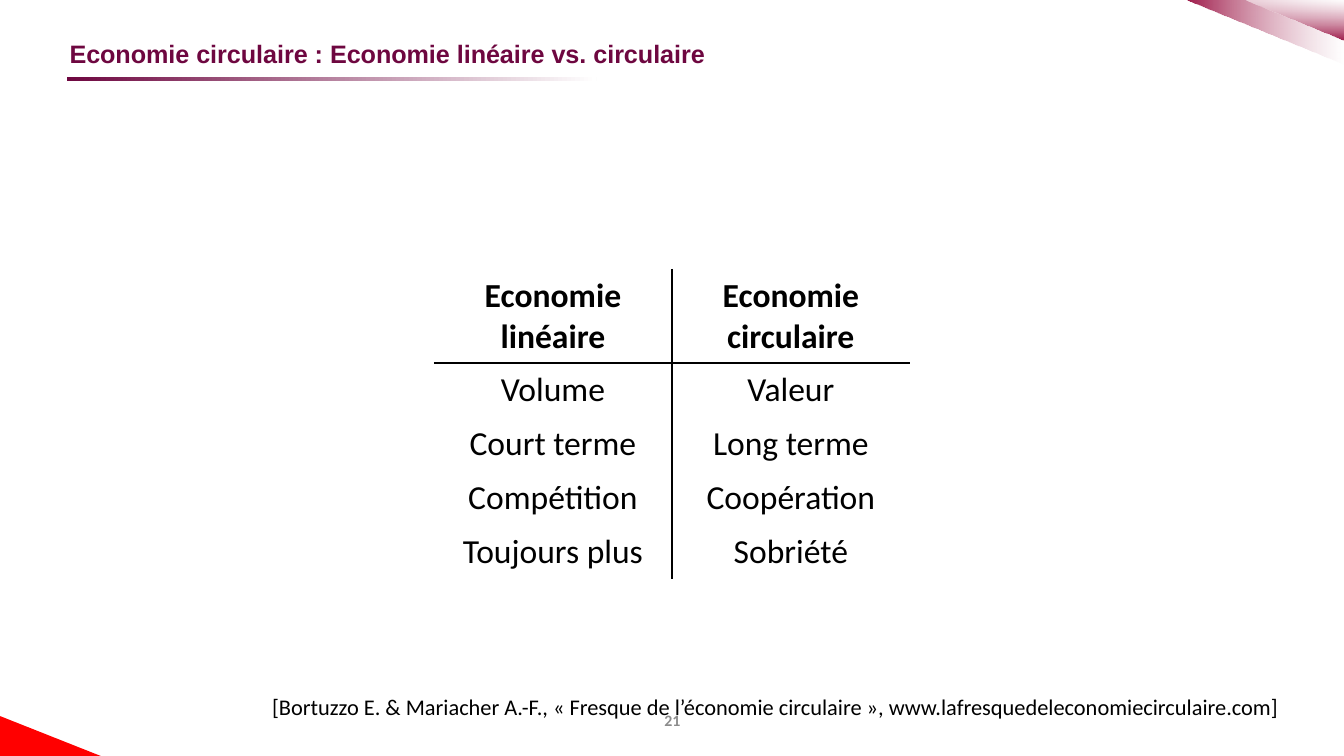
from dataclasses import dataclass

from lxml.etree import SubElement
from pptx import Presentation
from pptx.dml.color import RGBColor
from pptx.enum.shapes import MSO_SHAPE
from pptx.enum.text import MSO_ANCHOR, MSO_AUTO_SIZE, PP_ALIGN
from pptx.oxml.ns import qn
from pptx.util import Pt


@dataclass(frozen=True)
class Theme:
    plum: str = "6E0740"
    crimson: str = "9D1747"
    red: str = "FF0000"
    white: str = "FFFFFF"
    black: str = "000000"
    grey: str = "8C8C8C"
    heading_font: str = "Arial"
    body_font: str = "Calibri"
    title_size: float = 13.5
    table_size: float = 18
    source_size: float = 12
    number_size: float = 8.5
    rule_width: float = 1


THEME = Theme()


@dataclass(frozen=True)
class Stop:
    color: str
    opacity: int = 100


@dataclass(frozen=True)
class Corner:
    points: tuple
    stops: tuple
    angle: int = 0


@dataclass(frozen=True)
class Label:
    text: str
    box: tuple
    size: float
    color: str
    font: str = THEME.body_font
    bold: bool = False
    align: PP_ALIGN = PP_ALIGN.LEFT
    anchor: MSO_ANCHOR = MSO_ANCHOR.MIDDLE
    insets: tuple = (7.2, 3.6, 7.2, 3.6)
    wrap: bool = True


CORNERS = (
    Corner(((634.3, 0), (720, 0), (720, 34.4)),
           (Stop(THEME.crimson), Stop(THEME.white, 47))),
    Corner(((666, 0), (720, 0), (720, 21.6)),
           (Stop(THEME.white, 57), Stop(THEME.crimson)), angle=270),
    Corner(((0, 383.6), (54, 405), (0, 405)), (Stop(THEME.red),)),
)

LABELS = (
    Label("21", (246.2, 375.1, 228.2, 21.6), THEME.number_size, THEME.grey,
          bold=True, align=PP_ALIGN.CENTER),
    Label("Economie circulaire : Economie linéaire vs. circulaire",
          (30.2, 20.5, 648, 16.6), THEME.title_size, THEME.plum,
          font=THEME.heading_font, bold=True, insets=(7.2, 0, 0, 0)),
    Label("[Bortuzzo E. & Mariacher A.-F., « Fresque de l’économie circulaire », "
          "www.lafresquedeleconomiecirculaire.com]",
          (131.8, 367.9, 560.9, 21.8), THEME.source_size, THEME.black,
          align=PP_ALIGN.RIGHT, anchor=MSO_ANCHOR.TOP, wrap=False),
)

COMPARISON = (
    ("Economie linéaire", "Economie circulaire"),
    ("Volume", "Valeur"),
    ("Court terme", "Long terme"),
    ("Compétition", "Coopération"),
    ("Toujours plus", "Sobriété"),
)
TABLE_LEFT, TABLE_TOP, COLUMN_WIDTH = 232.5, 144, 127.5
HEADER_HEIGHT, ROW_HEIGHT = 50.4, 28.9


def rgb(color: str) -> RGBColor:
    return RGBColor.from_string(color)


def paint(shape, stops: tuple, angle: int = 0) -> None:
    shape.shadow.inherit = False
    shape.line.fill.background()
    if len(stops) == 1:
        shape.fill.solid()
        shape.fill.fore_color.rgb = rgb(stops[0].color)
        return
    shape.fill.gradient()
    shape.fill.gradient_angle = angle
    for gradient_stop, stop in zip(shape.fill.gradient_stops, stops):
        gradient_stop.color.rgb = rgb(stop.color)
    # Transparency of each stop
    for color, stop in zip(shape.element.spPr.iter(qn("a:srgbClr")), stops):
        if stop.opacity < 100:
            SubElement(color, qn("a:alpha"), val=str(stop.opacity * 1000))


def draw_corner(slide, corner: Corner) -> None:
    start, *rest = [(Pt(x), Pt(y)) for x, y in corner.points]
    builder = slide.shapes.build_freeform(*start)
    builder.add_line_segments(rest, close=True)
    paint(builder.convert_to_shape(), corner.stops, corner.angle)


def style(paragraph, size: float, color: str, font: str, bold: bool, align: PP_ALIGN) -> None:
    paragraph.alignment = align
    paragraph.font.size = Pt(size)
    paragraph.font.name = font
    paragraph.font.bold = bold
    paragraph.font.color.rgb = rgb(color)


def draw_label(slide, label: Label) -> None:
    frame = slide.shapes.add_textbox(*map(Pt, label.box)).text_frame
    frame.word_wrap = label.wrap
    frame.auto_size = MSO_AUTO_SIZE.NONE if label.wrap else MSO_AUTO_SIZE.SHAPE_TO_FIT_TEXT
    frame.vertical_anchor = label.anchor
    (frame.margin_left, frame.margin_top,
     frame.margin_right, frame.margin_bottom) = map(Pt, label.insets)
    frame.text = label.text
    style(frame.paragraphs[0], label.size, label.color, label.font, label.bold, label.align)


def set_borders(cell, ruled_sides: set) -> None:
    properties = cell._tc.get_or_add_tcPr()
    for side in "LRTB":
        line = SubElement(properties, qn(f"a:ln{side}"), w=str(Pt(THEME.rule_width)))
        if side in ruled_sides:
            fill = SubElement(line, qn("a:solidFill"))
            SubElement(fill, qn("a:srgbClr"), val=THEME.black)
        else:
            SubElement(line, qn("a:noFill"))


def draw_comparison(slide) -> None:
    rows, columns = len(COMPARISON), len(COMPARISON[0])
    height = HEADER_HEIGHT + (rows - 1) * ROW_HEIGHT
    table = slide.shapes.add_table(rows, columns, Pt(TABLE_LEFT), Pt(TABLE_TOP),
                                   Pt(columns * COLUMN_WIDTH), Pt(height)).table
    table.first_row = table.horz_banding = False
    for r, row in enumerate(COMPARISON):
        table.rows[r].height = Pt(ROW_HEIGHT if r else HEADER_HEIGHT)
        for c, text in enumerate(row):
            cell = table.cell(r, c)
            cell.text = text
            style(cell.text_frame.paragraphs[0], THEME.table_size, THEME.black,
                  THEME.body_font, r == 0, PP_ALIGN.CENTER)
            # One rule between the columns, one under the header
            ruled_sides = {"L" if c else "R"}
            if r < 2:
                ruled_sides.add("T" if r else "B")
            set_borders(cell, ruled_sides)
            cell.fill.background()


def main() -> None:
    presentation = Presentation()
    presentation.slide_width, presentation.slide_height = Pt(720), Pt(405)
    slide = presentation.slides.add_slide(presentation.slide_layouts[6])

    # Title underline and corner decoration
    underline = slide.shapes.add_shape(MSO_SHAPE.RECTANGLE, Pt(36), Pt(41.2), Pt(283.7), Pt(2.2))
    paint(underline, (Stop(THEME.plum), Stop(THEME.white)))
    for corner in CORNERS:
        draw_corner(slide, corner)

    # Page number, title and source
    for label in LABELS:
        draw_label(slide, label)

    # Linear versus circular economy
    draw_comparison(slide)
    presentation.save("out.pptx")


if __name__ == "__main__":
    main()
